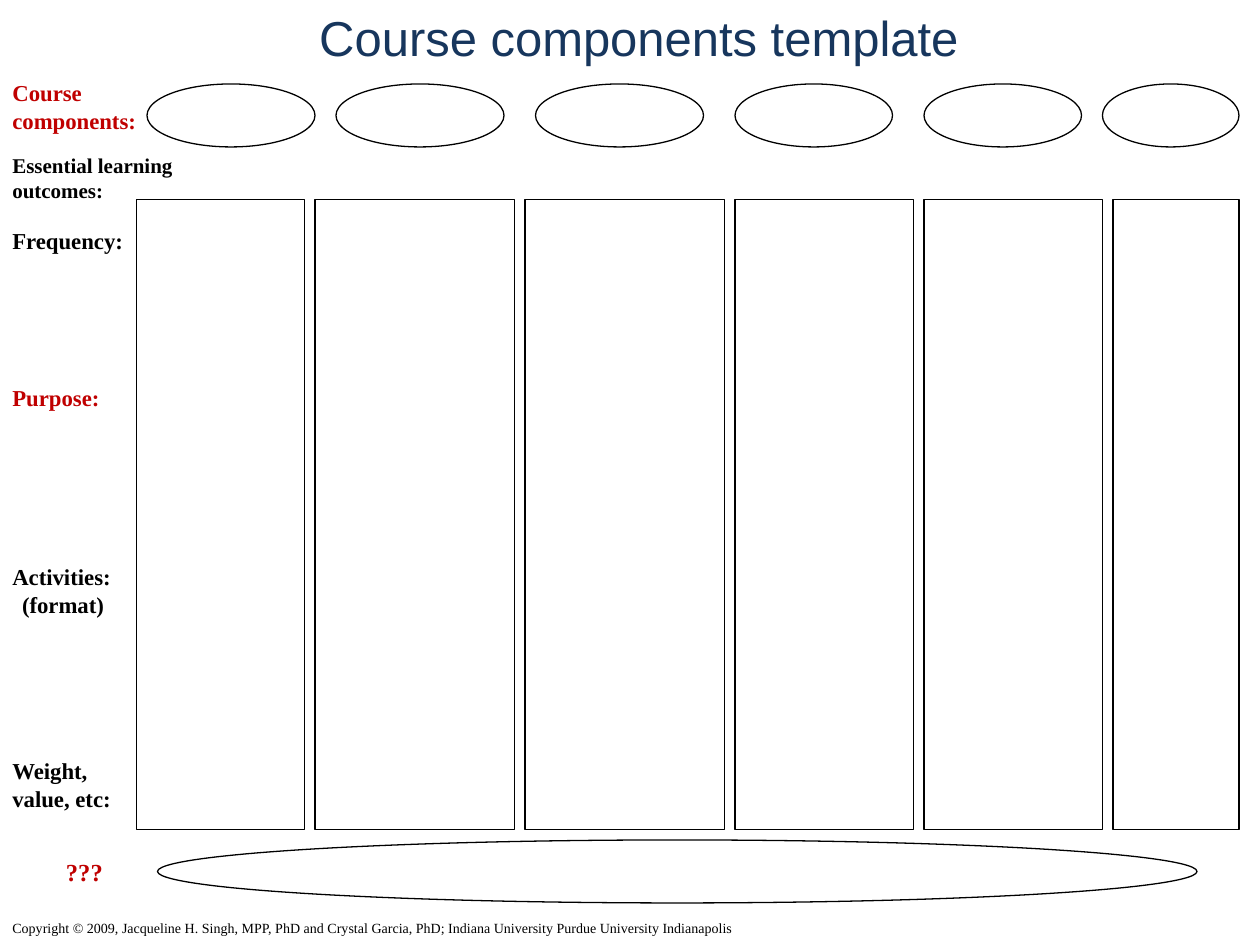
from pptx import Presentation
from pptx.dml.color import RGBColor
from pptx.enum.shapes import MSO_SHAPE as SHAPE
from pptx.enum.text import MSO_ANCHOR as ANCHOR, PP_ALIGN as ALIGN
from pptx.util import Inches, Pt

COLORS = {"navy": "17365D", "red": "C00000", "black": "000000"}
SERIF = "Times New Roman"
UNIT = 1 / 12  # the layout grid is a twelfth of an inch

# Column widths and oval (left, width) pairs, in grid units
COLUMN_WIDTHS = [16, 19, 19, 17, 17, 12]
COLUMN_LEFT, COLUMN_GAP = 13, 1
OVALS = [(14, 16), (32, 16), (51, 16), (70, 15), (88, 15), (105, 13)]

# Row labels: position, lines, size, colour
LABELS = [
    ((0, 0.58, 1.25, 0.54), ["Course components:"], 13, "red"),
    ((0, 1.16, 1.5, 0.5), ["Essential learning outcomes:"], 12, "black"),
    ((0, 1.75, 1.08, 0.32), ["Frequency:"], 13, "black"),
    ((0, 3, 0.92, 0.32), ["Purpose:"], 13, "red"),
    ((0, 4.42, 1, 0.54), ["Activities:", "(format)"], 13, "black"),
    ((0, 5.96, 1, 0.54), ["Weight, value, etc:"], 13, "black"),
]
COPYRIGHT = ("Copyright © 2009, Jacqueline H. Singh, MPP, PhD and Crystal Garcia, PhD; "
             "Indiana University Purdue University Indianapolis")


def add_text(s, at, lines, size, color, bold=True, name=SERIF,
             aligns=(ALIGN.LEFT, ALIGN.CENTER), anchor=ANCHOR.TOP):
    tf = s.shapes.add_textbox(*map(Inches, at)).text_frame
    tf.word_wrap = True
    tf.vertical_anchor = anchor
    formats = {"name": name, "size": Pt(size), "bold": bold}
    for i, (line, align) in enumerate(zip(lines, aligns)):
        p = tf.add_paragraph() if i else tf.paragraphs[0]
        p.alignment = align
        r = p.add_run()
        r.text = line
        for key, value in formats.items():
            setattr(r.font, key, value)
        r.font.color.rgb = RGBColor.from_string(COLORS[color])


def add_outline(s, kind, at):
    sp = s.shapes.add_shape(kind, *(Inches(n * UNIT) for n in at))
    sp.shadow.inherit = False
    sp.fill.background()
    sp.line.color.rgb = RGBColor.from_string(COLORS["black"])
    sp.line.width = Pt(0.75)


def main():
    prs = Presentation()
    prs.slide_width, prs.slide_height = Inches(10), Inches(7.5)
    s = prs.slides.add_slide(prs.slide_layouts[6])

    # Title and row labels
    add_text(s, (1.07, 0, 8, 0.58), ["Course components template"], 28, "navy",
             bold=False, name="Arial", aligns=[ALIGN.CENTER], anchor=ANCHOR.MIDDLE)
    for label in LABELS:
        add_text(s, *label)
    add_text(s, (0.17, 6.75, 1, 0.34), ["???"], 14, "red", aligns=[ALIGN.CENTER])

    # Component ovals and the wide oval at the bottom
    for left, width in OVALS:
        add_outline(s, SHAPE.OVAL, (left, 8, width, 6))
    add_outline(s, SHAPE.OVAL, (15, 80, 99, 6))

    # Component columns
    left = COLUMN_LEFT
    for width in COLUMN_WIDTHS:
        add_outline(s, SHAPE.RECTANGLE, (left, 19, width, 60))
        left += width + COLUMN_GAP

    # Copyright line
    add_text(s, (0, 7.25, 7.5, 0.24), [COPYRIGHT], 8, "black", bold=False)

    prs.save("out.pptx")


if __name__ == "__main__":
    main()
